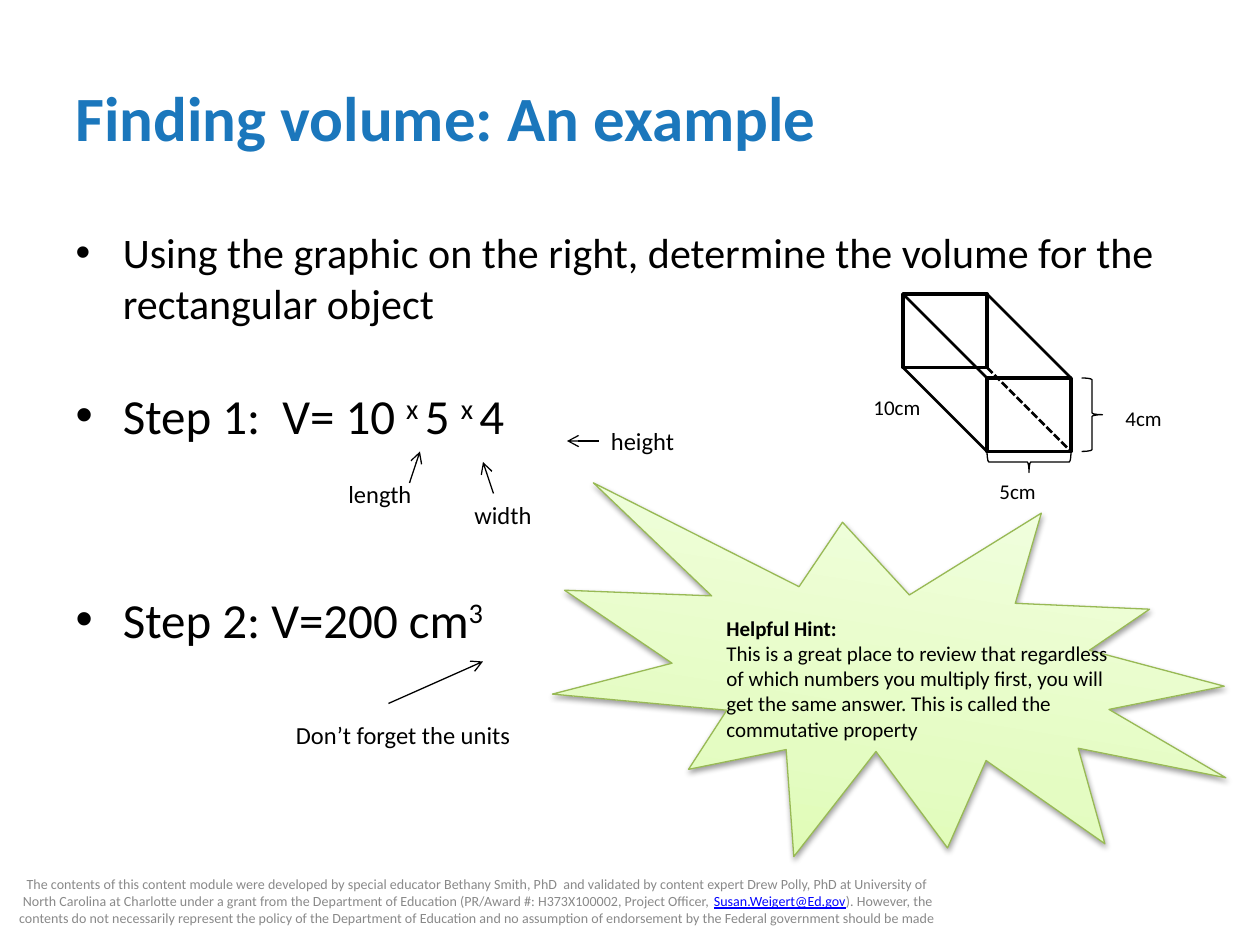
from pptx import Presentation
from pptx.dml.color import RGBColor
from pptx.enum.dml import MSO_LINE
from pptx.enum.shapes import MSO_CONNECTOR, MSO_SHAPE
from pptx.enum.text import MSO_ANCHOR, MSO_AUTO_SIZE, PP_ALIGN
from pptx.oxml import parse_xml
from pptx.oxml.ns import nsdecls, qn
from pptx.util import Pt

PX = 7620  # EMU per px, 120 px to the inch
STRAIGHT, DASH = MSO_CONNECTOR.STRAIGHT, MSO_LINE.SQUARE_DOT
RECTANGLE, BRACE, BURST = MSO_SHAPE.RECTANGLE, MSO_SHAPE.RIGHT_BRACE, MSO_SHAPE.EXPLOSION1
LEFT, CENTER = PP_ALIGN.LEFT, PP_ALIGN.CENTER
TOP, MIDDLE = MSO_ANCHOR.TOP, MSO_ANCHOR.MIDDLE

THEME = {
    "font": "Calibri", "ink": "000000", "title": "1B77BC", "footer": "898989",
    "link": "0000FF", "paper": "FFFFFF", "burst_line": "98B955",
    "burst": [(0, "DAFDA7"), (35, "E4FCC2"), (100, "F5FFE7")],
    "title_size": 36, "task_size": 24, "step_size": 28,
    "label_size": 14, "small_size": 12, "footer_size": 8,
    "thin": 0.75, "edge": 1.5, "face": 2,
}

# Content: a paragraph is a list of (text, format) runs
SUPER, BOLD = {"superscript": True}, {"bold": True}
TITLE = [("Finding volume: An example", BOLD)]
STEPS = [  # size, space before in points, runs
    ("task_size", 0, [("Using the graphic on the right, determine the volume "
                       "for the rectangular object", {})]),
    ("step_size", 33, [("Step 1:  V= 10 ", {}), ("x ", SUPER), ("5 ", {}),
                       ("x ", SUPER), ("4", {})]),
    ("step_size", 83, [("Step 2: V=200 cm", {}), ("3", SUPER)]),
]
FOOTER = [
    ("The contents of this content module were developed by special educator "
     "Bethany Smith, PhD  and validated by content expert Drew Polly, PhD at "
     "University of North Carolina at Charlotte under a grant from the Department "
     "of Education (PR/Award #: H373X100002, Project Officer, ", {}),
    ("Susan.Weigert@Ed.gov", {"color": "link", "underline": True}),
    ("). However, the contents do not necessarily represent the policy of the "
     "Department of Education and no assumption of endorsement by the Federal "
     "government should be made", {}),
]
HINT = [
    [("Helpful Hint:", BOLD)],
    [("This is a great place to review that regardless of which numbers you "
      "multiply first, you will get the same answer. This is called the "
      "commutative property", {})],
]
LABELS = [  # text, box, size
    ("length", (320, 450, 90, 41), "label_size"),
    ("width", (440, 470, 84, 41), "label_size"),
    ("height", (570, 400, 90, 41), "label_size"),
    ("Don’t forget the units", (270, 680, 240, 41), "label_size"),
    ("4cm", (1060, 380, 80, 36), "small_size"),
    ("5cm", (940, 450, 80, 36), "small_size"),
    ("10cm", (820, 370, 80, 36), "small_size"),
]
ARROWS = [(390, 460, 400, 430), (470, 470, 460, 440),
          (570, 420, 540, 420), (370, 670, 460, 630)]

# Prism: the front face is the back face moved by one depth
BACK_X, BACK_Y, FACE_W, FACE_H, DEPTH = 860, 280, 80, 70, 80
FRONT_X, FRONT_Y = BACK_X + DEPTH, BACK_Y + DEPTH
BRACE_W = 20


def emu(box):
    return [value * PX for value in box]


def color(name):
    return RGBColor.from_string(THEME[name])


def add_runs(paragraph, runs, size, ink="ink", align=LEFT):
    paragraph.alignment = align
    for text, style in runs:
        run = paragraph.add_run()
        run.text = text
        values = {"name": THEME["font"], "size": Pt(THEME[size]),
                  "bold": style.get("bold", False),
                  "underline": style.get("underline", False)}
        for key, value in values.items():
            setattr(run.font, key, value)
        run.font.color.rgb = color(style.get("color", ink))
        if style.get("superscript"):
            run._r.get_or_add_rPr().set("baseline", "30000")


def set_frame(shape, anchor=TOP):
    frame = shape.text_frame
    values = {"word_wrap": True, "auto_size": MSO_AUTO_SIZE.NONE,
              "vertical_anchor": anchor}
    for key, value in values.items():
        setattr(frame, key, value)
    return frame


def place(shape, box):
    for key, value in zip(("left", "top", "width", "height"), emu(box)):
        setattr(shape, key, value)


def next_paragraph(frame, index):
    return frame.add_paragraph() if index else frame.paragraphs[0]


def add_text(slide, box, paragraphs, size, ink="ink", align=LEFT, anchor=TOP):
    frame = set_frame(slide.shapes.add_textbox(*emu(box)), anchor)
    for index, runs in enumerate(paragraphs):
        add_runs(next_paragraph(frame, index), runs, size, ink, align)


def add_shape(slide, kind, box, width, fill=None, line="ink", rotation=0):
    shape = slide.shapes.add_shape(kind, *emu(box))
    shape.rotation = rotation
    if fill:
        shape.fill.solid()
        shape.fill.fore_color.rgb = color(fill)
    else:
        shape.fill.background()
    shape.line.color.rgb = color(line)
    shape.line.width = Pt(THEME[width])
    shape.shadow.inherit = False
    return shape


def add_line(slide, ends, width, dashed=False, arrow=False):
    connector = slide.shapes.add_connector(STRAIGHT, *emu(ends))
    connector.line.color.rgb = color("ink")
    connector.line.width = Pt(THEME[width])
    if dashed:
        connector.line.dash_style = DASH
    if arrow:
        connector.line._get_or_add_ln().append(
            parse_xml(f'<a:tailEnd {nsdecls("a")} type="arrow"/>'))
    connector._element.spPr.append(parse_xml(f'<a:effectLst {nsdecls("a")}/>'))


def add_burst(slide, box):
    burst = add_shape(slide, BURST, box, "thin", line="burst_line", rotation=9)
    properties = burst._element.spPr
    stops = "".join(f'<a:gs pos="{position * 1000}"><a:srgbClr val="{value}"/></a:gs>'
                    for position, value in THEME["burst"])
    properties.replace(properties.find(qn("a:noFill")), parse_xml(
        f'<a:gradFill {nsdecls("a")} rotWithShape="1"><a:gsLst>{stops}</a:gsLst>'
        '<a:lin ang="16200000" scaled="0"/></a:gradFill>'))
    properties.find(qn("a:effectLst")).append(parse_xml(
        f'<a:outerShdw {nsdecls("a")} blurRad="40000" dist="20000" dir="5400000" '
        f'rotWithShape="0"><a:srgbClr val="{THEME["ink"]}"><a:alpha val="38000"/>'
        '</a:srgbClr></a:outerShdw>'))


def add_prism(slide):
    for x, y in ((BACK_X, BACK_Y), (FRONT_X, FRONT_Y)):
        add_shape(slide, RECTANGLE, (x, y, FACE_W, FACE_H), "face", fill="paper")
    for right in (True, False):
        for bottom in (False, True):
            x, y = BACK_X + right * FACE_W, BACK_Y + bottom * FACE_H
            add_line(slide, (x, y, x + DEPTH, y + DEPTH), "edge",
                     dashed=right and bottom)
    # Braces beside and, turned a quarter, below the front face
    add_shape(slide, BRACE, (FRONT_X + FACE_W + 10, FRONT_Y, BRACE_W, FACE_H), "thin")
    add_shape(slide, BRACE, (FRONT_X + (FACE_W - BRACE_W) // 2,
                             FRONT_Y + FACE_H + (BRACE_W - FACE_W) // 2,
                             BRACE_W, FACE_W), "thin", rotation=90)


def main():
    presentation = Presentation()
    presentation.slide_width, presentation.slide_height = emu((1200, 900))
    slide = presentation.slides.add_slide(presentation.slide_layouts[1])

    # Title and steps
    title, body = slide.shapes.title, slide.placeholders[1]
    place(title, (60, 36, 1080, 150))
    add_runs(set_frame(title, MIDDLE).paragraphs[0], TITLE, "title_size", "title")
    place(body, (60, 210, 1080, 594))
    frame = set_frame(body)
    for index, (size, space, runs) in enumerate(STEPS):
        paragraph = next_paragraph(frame, index)
        paragraph.space_before = Pt(space)
        add_runs(paragraph, runs, size)

    # Footer, hint, prism and labels
    add_text(slide, (0, 834, 910, 48), [FOOTER], "footer_size", "footer", CENTER, MIDDLE)
    add_burst(slide, (528, 469, 650, 360))
    add_text(slide, (680, 580, 390, 133), HINT, "small_size")
    add_prism(slide)
    for text, box, size in LABELS:
        add_text(slide, box, [[(text, {})]], size)
    for ends in ARROWS:
        add_line(slide, ends, "thin", arrow=True)

    presentation.save("out.pptx")


if __name__ == "__main__":
    main()
